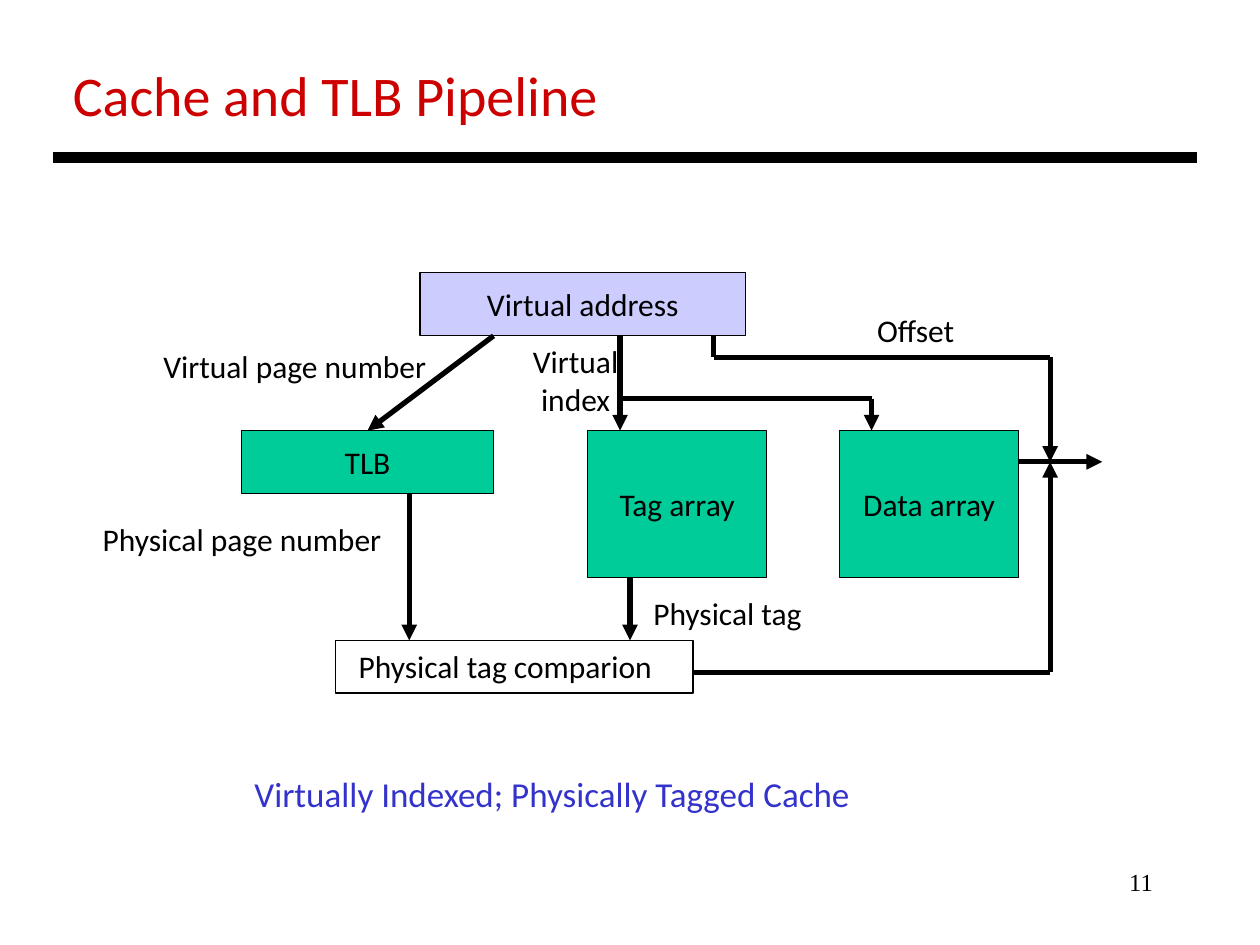
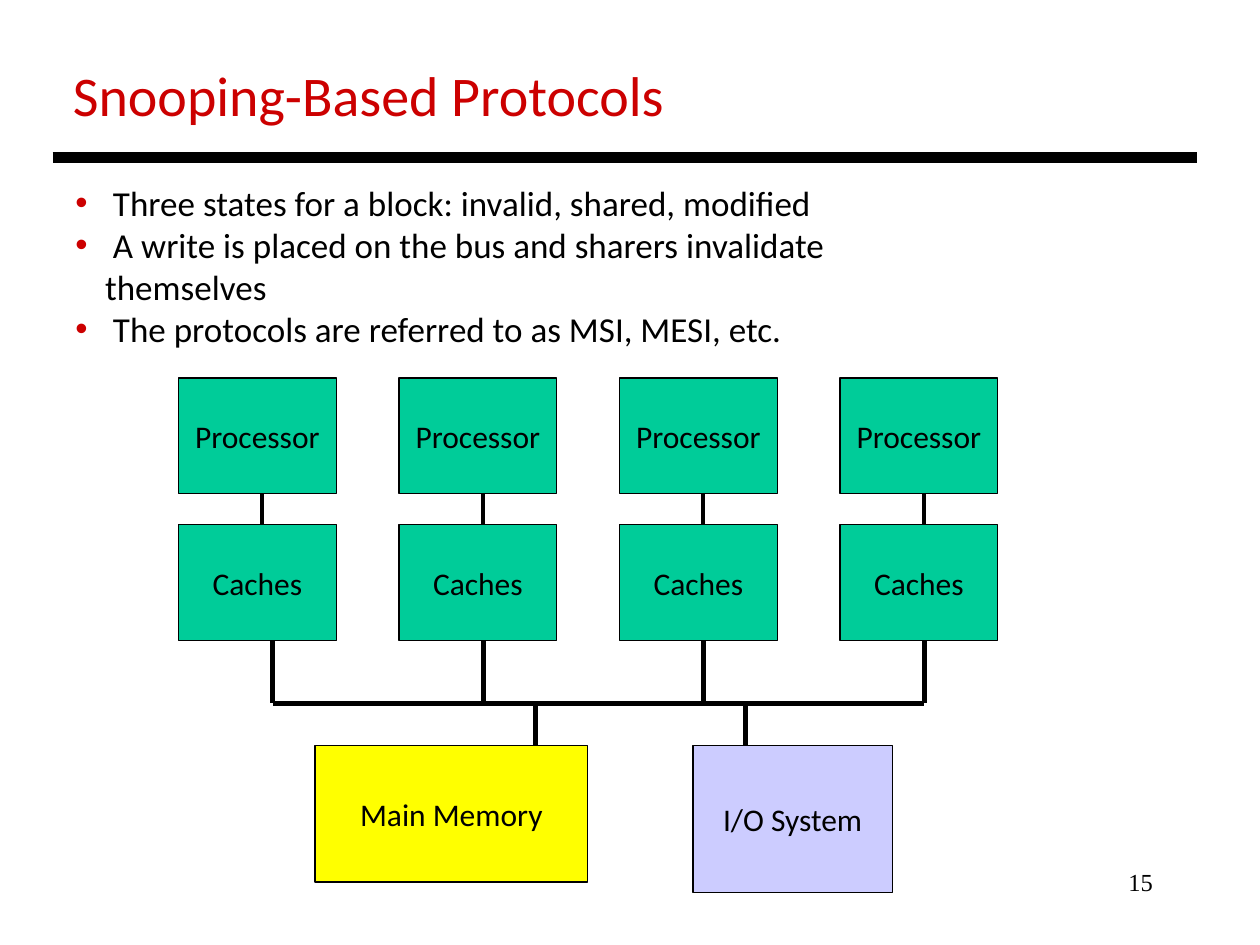
from lxml import etree
from pptx import Presentation
from pptx import util as u
from pptx.dml.color import RGBColor
from pptx.enum import shapes, text
from pptx.oxml.ns import qn

BLACK, RED, BLUE = "000000", "CC0000", "3333CC"
GREEN, LILAC, YELLOW = "00CC99", "CCCCFF", "FFFF00"
LEFT, CENTER, RIGHT = text.PP_ALIGN.LEFT, text.PP_ALIGN.CENTER, text.PP_ALIGN.RIGHT


def rgb(value):
    return RGBColor.from_string(value)


def lengths(values):
    return [u.Cm(v) for v in values]


def write(tf, words, size, color, align, font="Calibri"):
    tf.text = words
    for p in tf.paragraphs:
        p.alignment = align
        for r in p.runs:
            r.font.size = u.Pt(size)
            r.font.name = font
            r.font.color.rgb = rgb(color)


def add_label(slide, words, box, size=18, color=BLACK, align=CENTER,
              font="Calibri", wrap=False):
    tf = slide.shapes.add_textbox(*lengths(box)).text_frame
    tf.word_wrap = wrap
    write(tf, words, size, color, align, font)
    return tf


def add_block(slide, words, box, fill=None):
    sp = slide.shapes.add_shape(shapes.MSO_SHAPE.RECTANGLE, *lengths(box))
    sp.shadow.inherit = False
    if fill:
        sp.fill.solid()
        sp.fill.fore_color.rgb = rgb(fill)
    else:
        sp.fill.background()
    sp.line.color.rgb = rgb(BLACK)
    sp.line.width = u.Pt(0.75)
    if words:
        tf = sp.text_frame
        tf.word_wrap = False
        tf.vertical_anchor = text.MSO_ANCHOR.MIDDLE
        write(tf, words, 18, BLACK, CENTER)
    return sp


def add_line(slide, start, end, width=3, arrow=False):
    cx = slide.shapes.add_connector(
        shapes.MSO_CONNECTOR.STRAIGHT, *lengths(start + end))
    cx.line.color.rgb = rgb(BLACK)
    cx.line.width = u.Pt(width)
    if arrow:
        etree.SubElement(cx.line._get_or_add_ln(), qn("a:tailEnd"), type="triangle")
    etree.SubElement(cx._element.spPr, qn("a:effectLst"))
    return cx


def add_route(slide, *points):
    last = len(points) - 2
    for i, (start, end) in enumerate(zip(points, points[1:])):
        add_line(slide, start, end, arrow=i == last)


def add_bullets(slide, items, box):
    tf = add_label(slide, "\n".join(items), box, 20, align=LEFT, wrap=True)
    for p in tf.paragraphs:
        pPr = p._p.get_or_add_pPr()
        pPr.set("marL", str(u.Cm(0.6)))
        pPr.set("indent", str(-u.Cm(0.6)))
        clr = etree.SubElement(pPr, qn("a:buClr"))
        etree.SubElement(clr, qn("a:srgbClr"), val=RED)
        etree.SubElement(pPr, qn("a:buFont"), typeface="Arial")
        etree.SubElement(pPr, qn("a:buChar"), char="•")


def add_slide(prs, title, title_width, number):
    slide = prs.slides.add_slide(prs.slide_layouts[6])
    add_label(slide, number, (18.2, 17.36, 5.29, 1.27), 14, align=RIGHT,
              font="Times New Roman", wrap=True)
    add_label(slide, title, (1.22, 1.09, title_width, 1.63), 32, RED, LEFT)
    add_line(slide, (1.06, 3.18), (24.13, 3.18), 6)
    return slide


def build_pipeline(prs):
    slide = add_slide(prs, "Cache and TLB Pipeline", 11.2, "11")
    address_bottom, array_top, array_bottom = 6.77, 8.68, 11.64
    compare_top, output_y = 12.91, 9.31
    index_x, data_x, offset_x, select_x = 12.5, 17.57, 14.39, 21.17

    tlb = add_block(slide, "TLB", (4.87, array_top, 5.08, 1.27), GREEN)
    add_block(slide, "Virtual address", (8.47, 5.5, 6.56, 1.27), LILAC)
    for name, x in (("Tag array", 11.85), ("Data array", 16.93)):
        add_block(slide, name, (x, array_top, 3.6, 2.96), GREEN)
    add_block(slide, "", (6.77, compare_top, 7.2, 1.06))

    lookup = add_line(slide, (9.95, address_bottom), (7.41, array_top), arrow=True)
    lookup.end_connect(tlb, 0)
    add_route(slide, (index_x, address_bottom), (index_x, array_top))
    add_route(slide, (index_x, 8.04), (data_x, 8.04), (data_x, array_top))
    add_route(slide, (8.25, 9.95), (8.25, compare_top))
    add_route(slide, (12.7, array_bottom), (12.7, compare_top))
    add_route(slide, (20.53, output_y), (22.22, output_y))
    add_route(slide, (offset_x, address_bottom), (offset_x, 7.2),
              (select_x, 7.2), (select_x, output_y))
    add_route(slide, (13.97, 13.55), (select_x, 13.55), (select_x, output_y))

    add_label(slide, "Physical tag comparion", (6.98, compare_top, 6.48, 1.02), align=LEFT)
    for words, box in (
        ("Virtual page number", (3.0, 6.88, 5.89, 1.02)),
        ("Virtual\nindex", (10.36, 6.77, 2.49, 1.78)),
        ("Offset", (17.42, 6.15, 2.08, 1.02)),
        ("Physical page number", (1.78, 10.36, 6.2, 1.02)),
        ("Physical tag", (12.9, 11.86, 3.53, 1.02)),
    ):
        add_label(slide, words, box)
    add_label(slide, "Virtually Indexed; Physically Tagged Cache",
              (4.88, 15.44, 12.62, 1.12), 20, BLUE, LEFT)


def build_snooping(prs):
    slide = add_slide(prs, "Snooping-Based Protocols", 12.55, "15")
    add_bullets(slide, (
        " Three states for a block: invalid, shared, modified",
        " A write is placed on the bus and sharers invalidate themselves",
        " The protocols are referred to as MSI, MESI, etc.",
    ), (1.27, 3.53, 18.5, 3.7))

    first_x, pitch, width, height = 3.6, 4.445, 3.18, 2.33
    processor_y, cache_y, bus_y, device_y = 7.62, 10.58, 14.18, 15.03
    bus_taps = (5.5, 9.74, 14.18, 18.63)
    for i, tap in enumerate(bus_taps):
        x = first_x + i * pitch
        add_block(slide, "Processor", (x, processor_y, width, height), GREEN)
        add_block(slide, "Caches", (x, cache_y, width, height), GREEN)
        add_line(slide, (x + 1.69, processor_y + height), (x + 1.69, cache_y), 2.25)
        add_line(slide, (tap, cache_y + height), (tap, bus_y))
    add_line(slide, (bus_taps[0], bus_y), (bus_taps[-1], bus_y))

    for name, x, w, h, fill, tap in (
        ("Main Memory", 6.35, 5.5, 2.75, YELLOW, 10.8),
        ("I/O System", 13.97, 4.02, 2.96, LILAC, 15.03),
    ):
        add_block(slide, name, (x, device_y, w, h), fill)
        add_line(slide, (tap, bus_y), (tap, device_y))


def main():
    prs = Presentation()
    prs.slide_width, prs.slide_height = lengths((25.4, 19.05))
    build_pipeline(prs)
    build_snooping(prs)
    prs.save("out.pptx")


if __name__ == "__main__":
    main()
